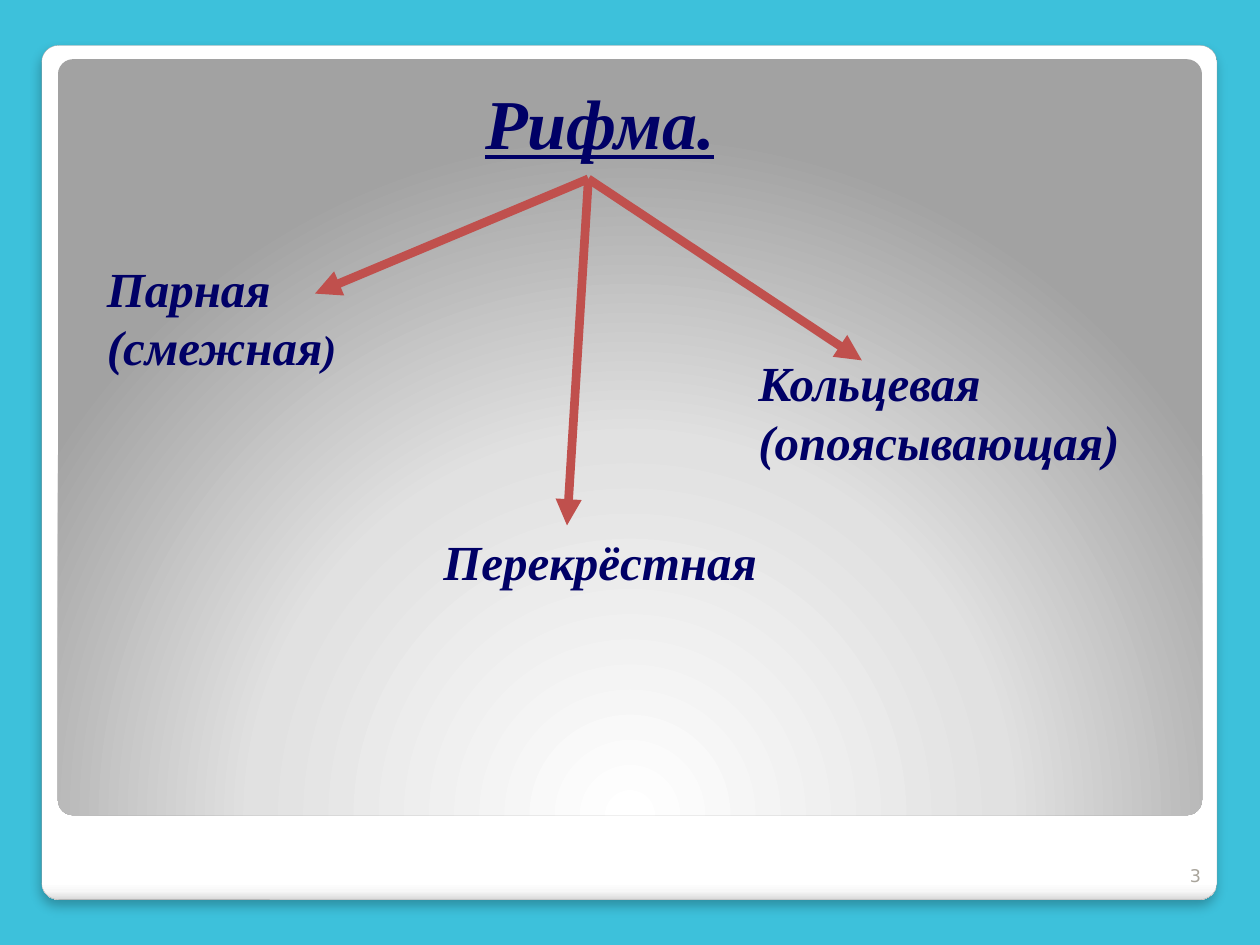
from dataclasses import dataclass

from pptx import Presentation
from pptx.dml.color import RGBColor
from pptx.enum.shapes import MSO_CONNECTOR, MSO_SHAPE
from pptx.enum.text import MSO_ANCHOR, MSO_AUTO_SIZE, PP_ALIGN
from pptx.oxml import parse_xml
from pptx.oxml.ns import nsdecls, qn
from pptx.oxml.xmlchemy import OxmlElement
from pptx.util import Pt

PX = 9144  # EMU per px, 100 px to the inch


@dataclass(frozen=True)
class Theme:
    background: str = "3DC1DB"
    frame_line: str = "A4A4A4"
    ink: str = "000066"
    arrow: str = "C0504D"
    muted: str = "A8A49B"
    frame_stops: tuple = ((0, "FFFFFF"), (98, "FFFFFF"), (99, "F7F7F7"), (100, "DADADA"))
    panel_stops: tuple = ((0, "FFFFFF"), (55, "E1E1E1"), (100, "A2A2A2"))
    font: str = "Times New Roman"
    number_font: str = "DejaVu Sans"
    title_size: int = 40
    term_size: int = 28
    bracket_size: int = 24
    number_size: int = 10


THEME = Theme()
LINEAR_DOWN = '<a:lin ang="5400000" scaled="0"/>'
CIRCLE_FROM_BELOW = ('<a:path path="circle">'
                     '<a:fillToRect l="50000" t="175000" r="50000" b="-75000"/></a:path>')
SHADOW = (f'<a:outerShdw {nsdecls("a")} blurRad="{Pt(6)}" dist="{Pt(4)}" dir="5400000" '
          'rotWithShape="0"><a:srgbClr val="000000"><a:alpha val="25000"/></a:srgbClr>'
          '</a:outerShdw>')


def px(*lengths):
    return [length * PX for length in lengths]


def write_text(shape, lines, *, size, color=THEME.ink, font=THEME.font, bold=True,
               italic=True, underline=None, align=PP_ALIGN.LEFT, anchor=MSO_ANCHOR.TOP,
               wrap=True, auto_size=MSO_AUTO_SIZE.SHAPE_TO_FIT_TEXT):
    """Fill a shape; each line is a list of (text, size or None) runs."""
    frame = shape.text_frame
    frame.word_wrap, frame.auto_size, frame.vertical_anchor = wrap, auto_size, anchor
    for index, line in enumerate(lines):
        paragraph = frame.add_paragraph() if index else frame.paragraphs[0]
        paragraph.alignment = align
        for text, run_size in line:
            run = paragraph.add_run()
            run.text = text
            run.font.name, run.font.size = font, Pt(run_size or size)
            run.font.bold, run.font.italic, run.font.underline = bold, italic, underline
            run.font.color.rgb = RGBColor.from_string(color)


def add_panel(slide, box, stops, direction):
    """Rounded panel with a gradient fill."""
    panel = slide.shapes.add_shape(MSO_SHAPE.ROUNDED_RECTANGLE, *px(*box))
    panel.adjustments[0] = 0.02
    panel.shadow.inherit = False
    panel.line.fill.background()
    panel.fill.background()
    stop_xml = "".join(f'<a:gs pos="{position * 1000}"><a:srgbClr val="{color}"/></a:gs>'
                       for position, color in stops)
    gradient = parse_xml(f'<a:gradFill {nsdecls("a")} rotWithShape="1">'
                         f'<a:gsLst>{stop_xml}</a:gsLst>{direction}</a:gradFill>')
    properties = panel._element.spPr
    properties.replace(properties.find(qn("a:noFill")), gradient)
    return panel


def add_backdrop(slide, box):
    """Coloured background, white frame with shadow, grey panel inside."""
    slide.background.fill.solid()
    slide.background.fill.fore_color.rgb = RGBColor.from_string(THEME.background)
    left, top, width, height = box
    frame = add_panel(slide, box, THEME.frame_stops, LINEAR_DOWN)
    frame.line.color.rgb = RGBColor.from_string(THEME.frame_line)
    frame.line.width = Pt(0.16)
    frame._element.spPr.find(qn("a:effectLst")).append(parse_xml(SHADOW))
    add_panel(slide, (left + 13, top + 11, width - 25, height - 78),
              THEME.panel_stops, CIRCLE_FROM_BELOW)


def add_title(slide, box, text):
    title = slide.shapes.title
    title.left, title.top, title.width, title.height = px(*box)
    write_text(title, [[(text, None)]], size=THEME.title_size, underline=True,
               auto_size=MSO_AUTO_SIZE.NONE)
    slide.shapes._spTree.append(title._element)  # above the panels


def add_arrow(slide, start, end):
    arrow = slide.shapes.add_connector(MSO_CONNECTOR.STRAIGHT, *px(*start, *end))
    arrow.line.color.rgb = RGBColor.from_string(THEME.arrow)
    arrow.line.width = Pt(5)
    tail = OxmlElement("a:tailEnd")
    tail.set("type", "triangle")
    arrow.line._get_or_add_ln().append(tail)
    arrow._element.spPr.append(OxmlElement("a:effectLst"))


def add_rhyme_tree(slide, box, kinds):
    """Kinds of rhyme, each with an arrow from the common root."""
    left, top, width, _ = box
    root = (left + 392, top)
    for (x, y, label_width, label_height), _, lines in kinds:
        label = slide.shapes.add_textbox(*px(left + x, top + y, label_width, label_height))
        write_text(label, lines, size=THEME.term_size, wrap=False)
    for _, (x, y), _ in kinds:
        add_arrow(slide, root, (left + x, top + y))


def add_slide_number(slide, box, number):
    write_text(slide.shapes.add_textbox(*px(*box)), [[(number, None)]],
               size=THEME.number_size, color=THEME.muted, font=THEME.number_font,
               bold=False, italic=False, align=PP_ALIGN.RIGHT, anchor=MSO_ANCHOR.BOTTOM,
               auto_size=MSO_AUTO_SIZE.NONE)


def main():
    presentation = Presentation()
    presentation.slide_width, presentation.slide_height = px(1000, 750)
    slide = presentation.slides.add_slide(presentation.slide_layouts[5])

    # Label box, arrow tip (both from the tree's corner) and lines
    kinds = [
        ((0, 58, 204, 104), (175, 91),
         [[("Парная", None)], [("(смежная", None), (")", THEME.bracket_size)]]),
        ((267, 275, 271, 57), (375, 275), [[("Перекрёстная", None)]]),
        ((517, 133, 310, 104), (609, 144),
         [[("Кольцевая", None)], [("(опоясывающая)", None)]]),
    ]
    add_backdrop(slide, (33, 36, 933, 678))
    add_title(slide, (375, 58, 400, 145), "Рифма.")
    add_rhyme_tree(slide, (75, 142, 827, 332), kinds)
    add_slide_number(slide, (913, 668, 50, 40), "3")
    presentation.save("out.pptx")


if __name__ == "__main__":
    main()
